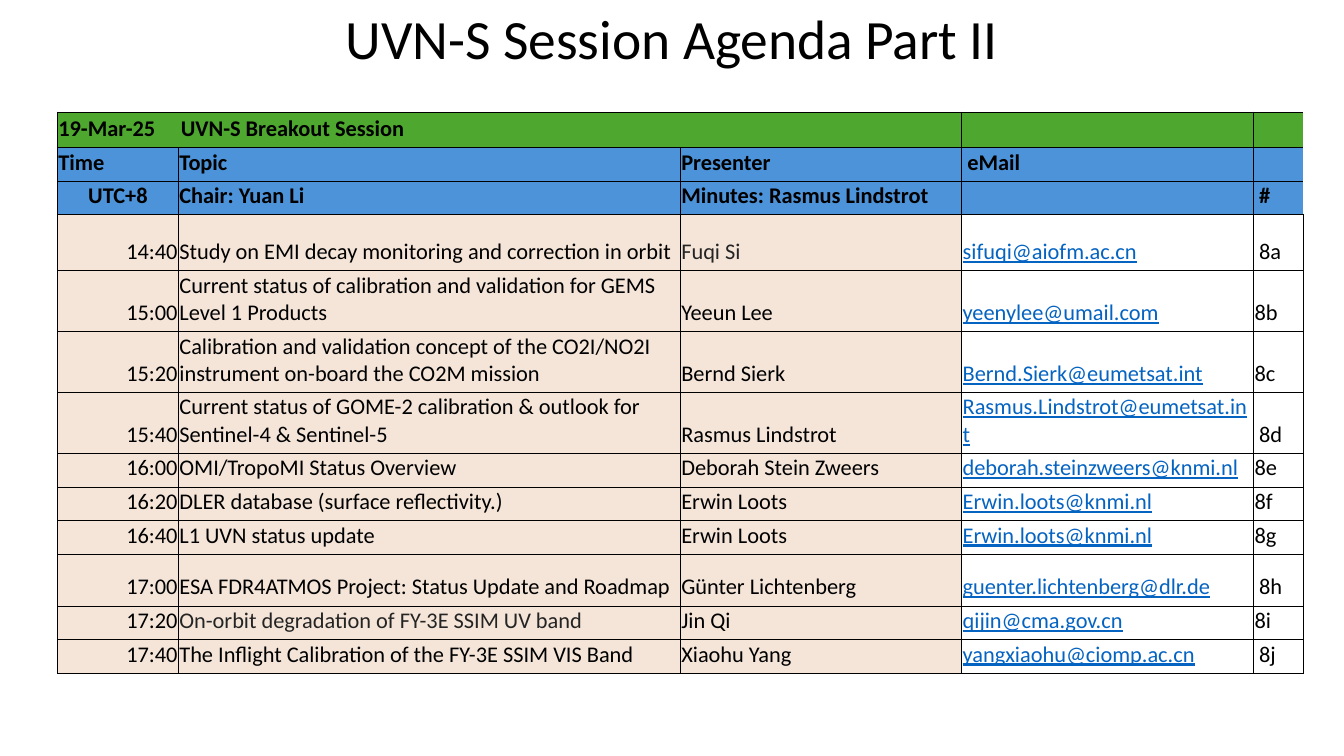
import lxml.etree
import pptx
import pptx.dml.color
import pptx.enum.text
import pptx.oxml
import pptx.oxml.ns
import pptx.util

Pt = pptx.util.Pt
ALIGN = pptx.enum.text.PP_ALIGN
ANCHOR = pptx.enum.text.MSO_ANCHOR

FONT = "Calibri"
BLACK, CHARCOAL, LINK_BLUE = "000000", "242424", "0563C1"
GREEN, BLUE, CREAM = "4EA72E", "4D93D9", "F5E5D8"

COLUMN_WIDTHS = [86.5, 358.5, 201, 208.5, 35.5]
ROW_HEIGHTS = [25.5, 24, 24, 40, 43.5, 43.5, 43.5, 24, 24, 24, 37, 24, 24]
EMAIL, NUMBER = 3, 4
INDENT = 4

HEADERS = [
    ["19-Mar-25\tUVN-S Breakout Session", "", "", "", ""],
    ["Time", "Topic", "Presenter", "eMail", ""],
    ["UTC+8", "Chair: Yuan Li", "Minutes: Rasmus Lindstrot", "", "#"],
]
TALKS = [
    ["14:40", "Study on EMI decay monitoring and correction in orbit",
     "Fuqi Si", "sifuqi@aiofm.ac.cn", "8a"],
    ["15:00", "Current status of calibration and validation for GEMS Level 1 Products",
     "Yeeun Lee", "yeenylee@umail.com", "8b"],
    ["15:20", "Calibration and validation concept of the CO2I/NO2I instrument "
     "on-board the CO2M mission",
     "Bernd Sierk", "Bernd.Sierk@eumetsat.int", "8c"],
    ["15:40", "Current status of GOME-2 calibration & outlook for Sentinel-4 & Sentinel-5",
     "Rasmus Lindstrot", "Rasmus.Lindstrot@eumetsat.int", "8d"],
    ["16:00", "OMI/TropoMI Status Overview",
     "Deborah Stein Zweers", "deborah.steinzweers@knmi.nl", "8e"],
    ["16:20", "DLER database (surface reflectivity.)",
     "Erwin Loots", "Erwin.loots@knmi.nl", "8f"],
    ["16:40", "L1 UVN status update", "Erwin Loots", "Erwin.loots@knmi.nl", "8g"],
    ["17:00", "ESA FDR4ATMOS Project: Status Update and Roadmap",
     "Günter Lichtenberg", "guenter.lichtenberg@dlr.de", "8h"],
    ["17:20", "On-orbit degradation of FY-3E SSIM UV band",
     "Jin Qi", "qijin@cma.gov.cn", "8i"],
    ["17:40", "The Inflight Calibration of the FY-3E SSIM VIS Band",
     "Xiaohu Yang", "yangxiaohu@ciomp.ac.cn", "8j"],
]
INDENTED = {"eMail", "#", "8a", "8d", "8h", "8j"}
CHARCOAL_TEXTS = {"Fuqi Si", "On-orbit degradation of FY-3E SSIM UV band"}


def rgb(hex_colour):
    return pptx.dml.color.RGBColor.from_string(hex_colour)


def format_runs(paragraph, size, colour=BLACK, bold=False, underline=False):
    for run in paragraph.runs:
        run.font.name = FONT
        run.font.size = Pt(size)
        run.font.bold = bold
        run.font.underline = underline
        run.font.color.rgb = rgb(colour)


def add_title(slide, title):
    box = slide.shapes.add_textbox(Pt(66), Pt(8.5), Pt(828), Pt(42.5))
    frame = box.text_frame
    frame.word_wrap = True
    frame.vertical_anchor = ANCHOR.MIDDLE
    frame.text = title
    heading = frame.paragraphs[0]
    heading.alignment = ALIGN.CENTER
    heading.line_spacing = 0.9
    format_runs(heading, 39.6)


def set_borders(cell, visible_sides):
    properties = cell._tc.get_or_add_tcPr()
    for side in "LRTB":
        line = lxml.etree.SubElement(
            properties, pptx.oxml.ns.qn(f"a:ln{side}"), w=str(Pt(0.5)))
        if side in visible_sides:
            paint = lxml.etree.SubElement(line, pptx.oxml.ns.qn("a:solidFill"))
            lxml.etree.SubElement(paint, pptx.oxml.ns.qn("a:srgbClr"), val=BLACK)
        else:
            lxml.etree.SubElement(line, pptx.oxml.ns.qn("a:noFill"))


def add_tab_stop(paragraph, position):
    stops = lxml.etree.SubElement(
        paragraph._p.get_or_add_pPr(), pptx.oxml.ns.qn("a:tabLst"))
    lxml.etree.SubElement(
        stops, pptx.oxml.ns.qn("a:tab"), pos=str(Pt(position)), algn="l")


def fill_cell(cell, text, fill, alignment=ALIGN.LEFT, sides="LRTB", **font):
    cell.vertical_anchor = ANCHOR.BOTTOM
    cell.margin_left = Pt(INDENT if text in INDENTED else 0.7)
    cell.margin_top = cell.margin_right = Pt(0.7)
    cell.margin_bottom = Pt(3.6 if text else 0)
    cell.text_frame.text = text
    paragraph = cell.text_frame.paragraphs[0]
    paragraph.alignment = alignment
    format_runs(paragraph, 16, **font)
    set_borders(cell, sides)
    if fill:
        cell.fill.solid()
        cell.fill.fore_color.rgb = rgb(fill)
    else:
        cell.fill.background()


def add_agenda(slide):
    agenda = slide.shapes.add_table(
        len(ROW_HEIGHTS), len(COLUMN_WIDTHS), Pt(41), Pt(80),
        Pt(sum(COLUMN_WIDTHS)), Pt(sum(ROW_HEIGHTS))).table
    agenda.first_row = agenda.horz_banding = False
    for column, width in zip(agenda.columns, COLUMN_WIDTHS):
        column.width = Pt(width)
    for row, height in zip(agenda.rows, ROW_HEIGHTS):
        row.height = Pt(height)

    for r, header in enumerate(HEADERS):
        for c, text in enumerate(header):
            fill_cell(agenda.cell(r, c), text, BLUE if r else GREEN,
                      ALIGN.CENTER if text == "UTC+8" else ALIGN.LEFT,
                      "LTB" if c == NUMBER else "LRTB", bold=True)
    session = agenda.cell(0, 0)
    session.merge(agenda.cell(0, 2))
    add_tab_stop(session.text_frame.paragraphs[0], 87.5)

    for r, talk in enumerate(TALKS, len(HEADERS)):
        for c, text in enumerate(talk):
            colour = CHARCOAL if text in CHARCOAL_TEXTS else BLACK
            fill_cell(agenda.cell(r, c), text, CREAM if c < EMAIL else None,
                      ALIGN.LEFT if c else ALIGN.RIGHT,
                      colour=LINK_BLUE if c == EMAIL else colour,
                      underline=c == EMAIL)


def main():
    deck = pptx.Presentation()
    deck.slide_width, deck.slide_height = Pt(960), Pt(540)
    slide = deck.slides.add_slide(deck.slide_layouts[6])
    add_title(slide, "UVN-S Session Agenda Part II")
    add_agenda(slide)
    deck.save("out.pptx")


if __name__ == "__main__":
    main()
